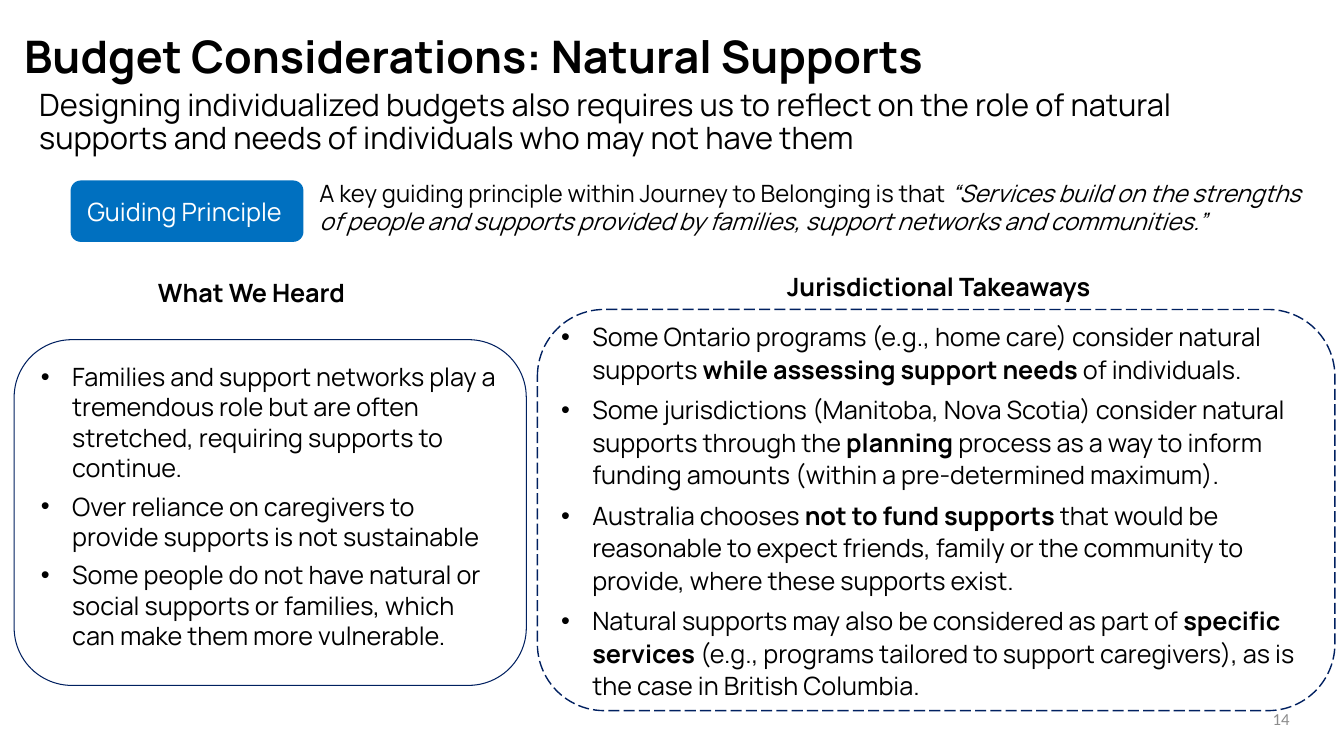
from lxml import etree
from pptx import Presentation
from pptx.dml.color import RGBColor
from pptx.enum.dml import MSO_LINE
from pptx.enum.shapes import MSO_SHAPE
from pptx.enum.text import MSO_ANCHOR, MSO_AUTO_SIZE, PP_ALIGN
from pptx.oxml.ns import qn
from pptx.util import Inches, Pt

LEFT, CENTER, RIGHT = PP_ALIGN.LEFT, PP_ALIGN.CENTER, PP_ALIGN.RIGHT
TOP, MIDDLE = MSO_ANCHOR.TOP, MSO_ANCHOR.MIDDLE
ROUNDED = MSO_SHAPE.ROUNDED_RECTANGLE
LONG_DASH = MSO_LINE.LONG_DASH
BLACK, WHITE, GRAY = "000000", "FFFFFF", "8C8C8C"
NAVY, BLUE = "002060", "0070C0"
BULLET_INDENT = Inches(0.31)


def color(value):
    return RGBColor.from_string(value)


def write(shape, paragraphs, size, align=LEFT, anchor=TOP, spacing=None, after=0,
          bold=None, font="Manrope", ink=BLACK, bullets=False, emphasis="bold"):
    """Fill a shape with text; every second run of a paragraph is emphasized."""
    frame = shape.text_frame
    frame.word_wrap = True
    frame.auto_size = MSO_AUTO_SIZE.NONE
    frame.vertical_anchor = anchor
    for number, runs in enumerate(paragraphs):
        paragraph = frame.add_paragraph() if number else frame.paragraphs[0]
        paragraph.alignment = align
        paragraph.space_after = Pt(after)
        if spacing:
            paragraph.line_spacing = spacing
        if bullets:
            properties = paragraph._p.get_or_add_pPr()
            properties.set("marL", str(BULLET_INDENT))
            properties.set("indent", str(-BULLET_INDENT))
            etree.SubElement(properties, qn("a:buFont"), typeface="Arial")
            etree.SubElement(properties, qn("a:buChar"), char="•")
        paragraph.font.name = font
        paragraph.font.size = Pt(size)
        paragraph.font.bold = bold
        paragraph.font.color.rgb = color(ink)
        for position, text in enumerate(runs):
            run = paragraph.add_run()
            run.text = text
            if position % 2:
                setattr(run.font, emphasis, True)


presentation = Presentation()
presentation.slide_width = Inches(13.33)
presentation.slide_height = Inches(7.5)
slide = presentation.slides.add_slide(presentation.slide_layouts[5])
shapes = slide.shapes

# Title
title = shapes.title
title.left, title.top, title.width, title.height = map(Inches, (0.14, 0.11, 12.33, 0.95))
write(title, [["Budget Considerations: Natural Supports"]], 32,
      anchor=MIDDLE, spacing=0.9, bold=True)

# Plain text: box, runs, formatting
texts = [
    ((0.29, 0.84, 12.33, 0.86),
     ["Designing individualized budgets also requires us to reflect on the role of "
      "natural supports and needs of individuals who may not have them"],
     dict(size=22, spacing=0.9, after=6)),
    ((3.07, 1.72, 9.97, 0.67),
     ["A key guiding principle within Journey to Belonging is that ",
      "“Services build on the strengths of people and supports provided by families, "
      "support networks and communities.”"],
     dict(size=17, emphasis="italic")),
    ((0.33, 2.7, 4.33, 0.4), ["What We Heard"],
     dict(size=18, align=CENTER, after=6, bold=True)),
    ((6, 2.62, 6.67, 0.4), ["Jurisdictional Takeaways "],
     dict(size=18, align=CENTER, spacing=1.07, after=6, bold=True)),
    ((11.26, 6.86, 1.63, 0.54), ["14"],
     dict(size=12, align=RIGHT, anchor=MIDDLE, font="Calibri", ink=GRAY)),
]
for box, runs, formatting in texts:
    write(shapes.add_textbox(*map(Inches, box)), [runs], **formatting)

# Rounded panels: box, fill, line width, dash, side inset, paragraphs, formatting
heard = [
    ["Families and support networks play a tremendous role but are often stretched, "
     "requiring supports to continue."],
    ["Over reliance on caregivers to provide supports is not sustainable"],
    ["Some people do not have natural or social supports or families, which can make "
     "them more vulnerable."],
]
takeaways = [
    ["Some Ontario programs (e.g., home care) consider natural supports ",
     "while assessing support needs ", "of individuals."],
    ["Some jurisdictions (Manitoba, Nova Scotia) consider natural supports through the ",
     "planning ",
     "process as a way to inform funding amounts (within a pre-determined maximum)."],
    ["Australia chooses ", "not to fund supports ",
     "that would be reasonable to expect friends, family or the community to provide, "
     "where these supports exist."],
    ["Natural supports may also be considered as part of ", "specific services ",
     "(e.g., programs tailored to support caregivers), as is the case in British Columbia."],
]
panels = [
    ((0.7, 1.79, 2.31, 0.61), BLUE, None, None, 0.1, [["Guiding Principle "]],
     dict(align=CENTER, anchor=MIDDLE, ink=WHITE)),
    ((0.14, 3.37, 5.08, 3.43), None, 0.75, None, 0.1, heard,
     dict(after=6, bullets=True)),
    ((5.33, 3.07, 7.91, 3.98), None, 1, LONG_DASH, 0.04, takeaways,
     dict(anchor=MIDDLE, spacing=1.07, after=6, bullets=True)),
]
for box, fill, line_width, dash, inset, paragraphs, formatting in panels:
    panel = shapes.add_shape(ROUNDED, *map(Inches, box))
    panel.shadow.inherit = False
    if fill:
        panel.fill.solid()
        panel.fill.fore_color.rgb = color(fill)
    else:
        panel.fill.background()
    if line_width:
        panel.line.color.rgb = color(NAVY)
        panel.line.width = Pt(line_width)
        panel.line.dash_style = dash
    else:
        panel.line.fill.background()
    panel.text_frame.margin_left = panel.text_frame.margin_right = Inches(inset)
    write(panel, paragraphs, 18, **formatting)

presentation.save("out.pptx")
